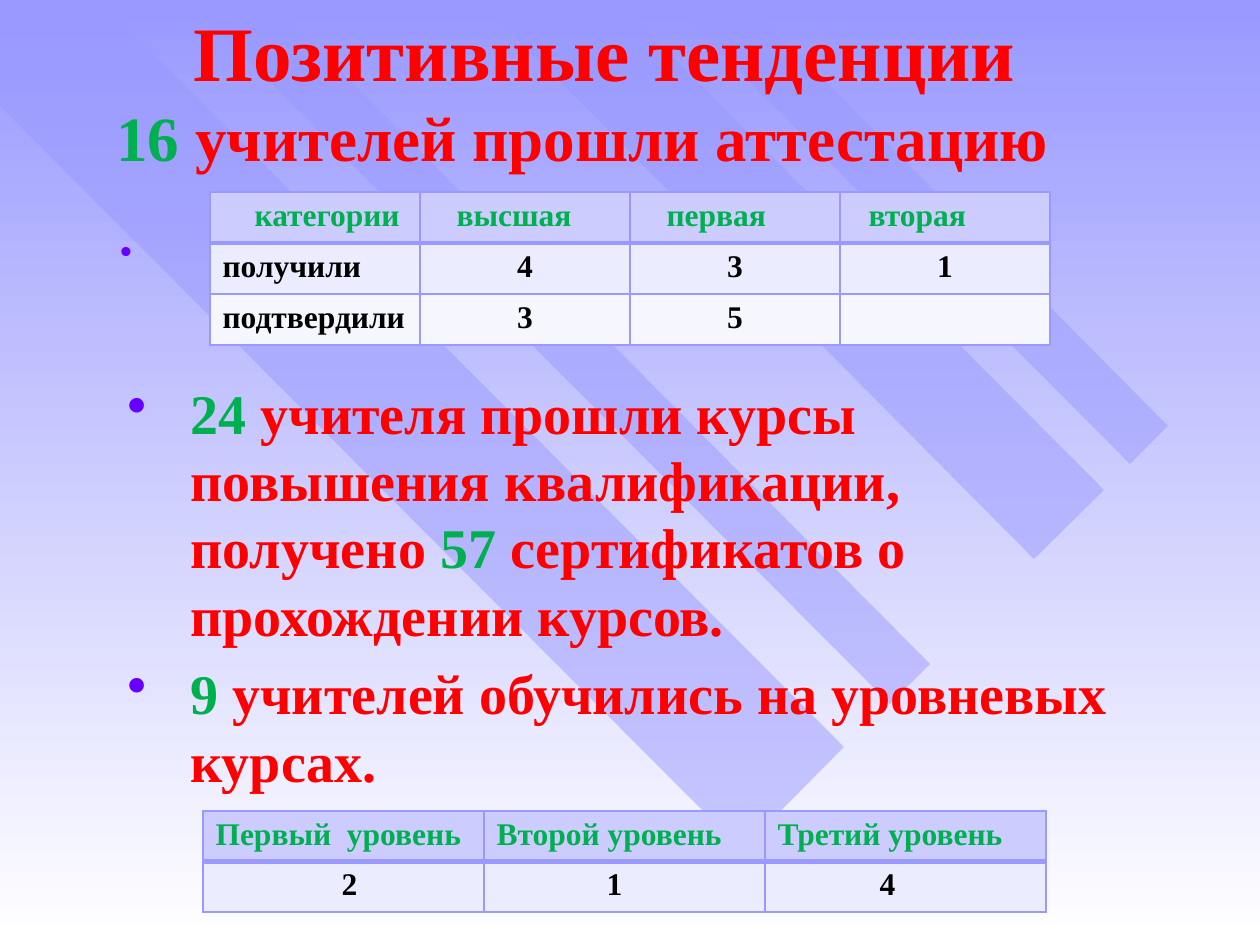
"""Build the slide on teachers' certification and training courses."""
from dataclasses import dataclass
from lxml.etree import SubElement as Sub
from pptx import Presentation
from pptx.dml.color import RGBColor
from pptx.enum.text import PP_ALIGN as Align
from pptx.oxml import parse_xml
from pptx.oxml.ns import nsdecls, qn
from pptx.util import Pt

SCALE = 914400 / 126
RED, GREEN, BLACK = "FF0000", "00B050", "000000"
VIOLET, LILAC = "6600FF", "9999FF"
FILLS = ["CCCCFF", "ECECFF", "F6F6FF"]


def px(num):
    return round(num * SCALE)


def rgb(code):
    return RGBColor.from_string(code)


@dataclass
class Deck:
    slide: object
    face: str = "Times New Roman"

    def ground(self, top, base):
        fill = self.slide.background.fill
        fill.gradient()
        fill.gradient_angle = 270
        for stop, code in zip(fill.gradient_stops, (top, base)):
            stop.color.rgb = rgb(code)

    def band(self, start, *rest):
        form = self.slide.shapes.build_freeform(*start, scale=SCALE)
        form.add_line_segments(rest)
        shape = form.convert_to_shape()
        shape.shadow.inherit = False
        shape.line.fill.background()
        shape.fill.solid()
        shape.fill.fore_color.rgb = rgb(LILAC)
        color = shape.fill._xPr.find(".//" + qn("a:srgbClr"))
        Sub(color, qn("a:alpha"), val="50000")

    def box(self, left, top, width, height):
        area = (px(num) for num in (left, top, width, height))
        frame = self.slide.shapes.add_textbox(*area).text_frame
        frame.word_wrap = True
        frame.margin_top = frame.margin_bottom = 0
        return frame

    def style(self, run, size, code, bold=True):
        font = run.font
        font.name, font.size, font.bold = self.face, Pt(size), bold
        font.color.rgb = rgb(code)

    def para(self, frame, parts, size, gap=0, left=0, bold=True, mark=False):
        first = not frame.paragraphs[0].runs
        para = frame.paragraphs[0] if first else frame.add_paragraph()
        prop = para._p.get_or_add_pPr()
        prop.set("marL", str(px(left)))
        if mark:
            prop.set("indent", str(-px(left)))
            Sub(Sub(prop, qn("a:buClr")), qn("a:srgbClr"), val=VIOLET)
            Sub(prop, qn("a:buChar"), char="•")
            para.line_spacing = Pt(38.5)
        if not first:
            para.space_before = Pt(gap)
        for text, code in parts:
            run = para.add_run()
            run.text = text
            self.style(run, size, code, bold)

    def edge(self, cell, row):
        prop = cell._tc.get_or_add_tcPr()
        wide = {"T": row == 1, "B": row == 0}
        for spot, side in enumerate("LRTB"):
            width = Pt(3 if wide.get(side) else 1)
            prop.insert(spot, parse_xml(
                f'<a:ln{side} {nsdecls("a")} w="{width}"><a:solidFill>'
                f'<a:srgbClr val="{LILAC}"/></a:solidFill></a:ln{side}>'))

    def grid(self, left, top, wide, high, rows, pads, center=False):
        count, cols = len(rows), len(rows[0])
        area = (px(num) for num in (left, top, wide * cols, high * count))
        table = self.slide.shapes.add_table(count, cols, *area).table
        table.first_row = table.horz_banding = False
        for row, texts in enumerate(rows):
            for col, text in enumerate(texts):
                cell = table.cell(row, col)
                cell.fill.solid()
                cell.fill.fore_color.rgb = rgb(FILLS[row])
                self.edge(cell, row)
                cell.text_frame.text = text
                para = cell.text_frame.paragraphs[0]
                if center and row and col:
                    para.alignment = Align.CENTER
                pad = pads[row][col] if row < len(pads) else 0
                para._p.get_or_add_pPr().set("marL", str(px(pad)))
                for run in para.runs:
                    self.style(run, 18, BLACK if row else GREEN)


def main():
    show = Presentation()
    show.slide_width, show.slide_height = px(1260), px(945)
    deck = Deck(show.slides.add_slide(show.slide_layouts[6]))

    deck.ground(LILAC, "FFFFFF")
    deck.band((844, 747), (100, 0), (0, 0), (0, 106), (742, 850))
    deck.band((270, 0), (930, 664), (890, 704), (188, 0))
    deck.band((616, 0), (1104, 490), (1034, 559), (479, 0))
    deck.band((668, 0), (1130, 464), (1168, 426), (745, 0))

    title = deck.box(104, 4, 1052, 260)
    deck.para(title, [("Позитивные тенденции", RED)], 44, left=77)
    deck.para(title, [("16", GREEN), (" учителей прошли аттестацию", RED)],
              36, gap=1)
    deck.para(title, [(".", VIOLET)], 44, gap=3, bold=False)

    body = deck.box(115, 378, 1042, 425)
    deck.para(body, [
        ("24 ", GREEN),
        ("учителя прошли курсы повышения квалификации, получено ", RED),
        ("57", GREEN),
        (" сертификатов о прохождении курсов.", RED),
    ], 32, left=63, mark=True)
    deck.para(body, [
        ("9 ", GREEN),
        ("учителей обучились на уровневых курсах.", RED),
    ], 32, gap=6.4, left=63, mark=True)

    deck.grid(210, 192, 210, 51, [
        ["категории", "высшая", "первая", "вторая"],
        ["получили", "4", "3", "1"],
        ["подтвердили", "3", "5", ""],
    ], [[32, 24, 24, 16]], center=True)
    deck.grid(203, 811, 281, 48, [
        ["Первый  уровень", "Второй уровень", "Третий уровень"],
        ["2", "1", "4"],
    ], [[0, 0, 0], [126, 110, 102]])

    show.save("out.pptx")


if __name__ == "__main__":
    main()
